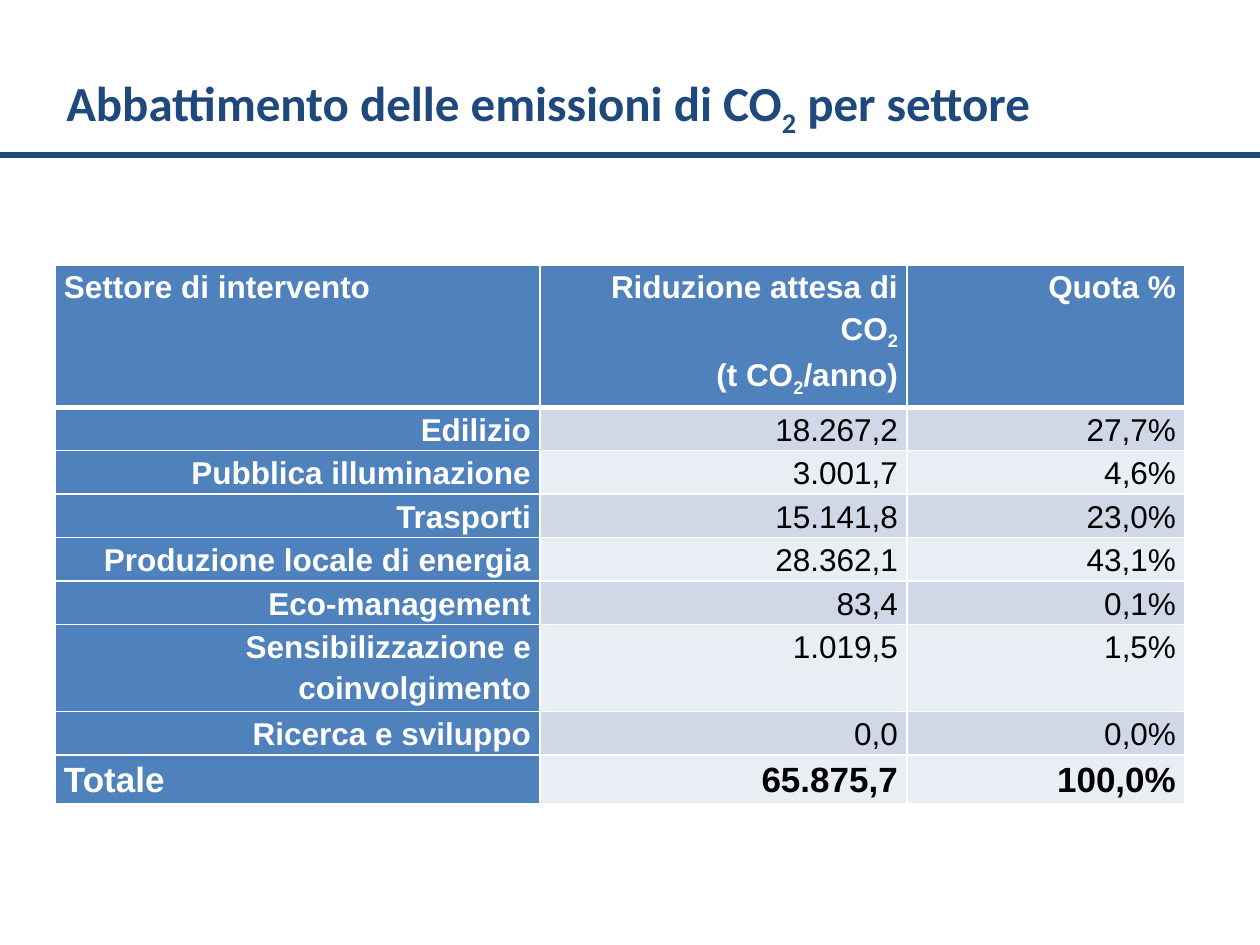
from dataclasses import dataclass

import pptx
import pptx.dml.color
import pptx.enum.shapes
import pptx.enum.text
import pptx.oxml
import pptx.oxml.ns
import pptx.util

ALIGN = pptx.enum.text.PP_ALIGN
EMU_PER_PX = 914400 / 126


@dataclass(frozen=True)
class Theme:
    navy: str = "1F497D"
    blue: str = "4F81BD"
    band_dark: str = "D0D8E8"
    band_light: str = "E9EDF4"
    white: str = "FFFFFF"
    black: str = "000000"
    title_font: str = "Calibri"
    table_font: str = "Arial"
    title_size: int = 28
    body_size: int = 18
    total_size: int = 20


@dataclass(frozen=True)
class Sector:
    name: str
    reduction: str
    share: str
    is_total: bool = False


THEME = Theme()
TITLE = "Abbattimento delle emissioni di CO~2~ per settore"
HEADINGS = ["Settore di intervento",
            "Riduzione attesa di CO~2~\n(t CO~2~/anno)", "Quota %"]
SECTORS = [
    Sector("Edilizio", "18.267,2", "27,7%"),
    Sector("Pubblica illuminazione", "3.001,7", "4,6%"),
    Sector("Trasporti", "15.141,8", "23,0%"),
    Sector("Produzione locale di energia", "28.362,1", "43,1%"),
    Sector("Eco-management", "83,4", "0,1%"),
    Sector("Sensibilizzazione e coinvolgimento", "1.019,5", "1,5%"),
    Sector("Ricerca e sviluppo", "0,0", "0,0%"),
    Sector("Totale", "65.875,7", "100,0%", is_total=True),
]
COLUMN_WIDTHS = [485, 367, 278]
HEADER_HEIGHT, ROW_HEIGHT, TABLE_HEIGHT = 110, 26, 461


def px(length: int) -> pptx.util.Emu:
    return pptx.util.Emu(round(length * EMU_PER_PX))


def rgb(value: str) -> pptx.dml.color.RGBColor:
    return pptx.dml.color.RGBColor.from_string(value)


def write_text(frame, text: str, *, font: str, size: int, color: str,
               bold: bool = True, align=ALIGN.LEFT, line_spacing: float = 1.0,
               space_after: int = 0) -> None:
    """Fill a text frame; pieces between tildes become subscripts."""
    for index, line in enumerate(text.split("\n")):
        paragraph = frame.add_paragraph() if index else frame.paragraphs[0]
        paragraph.alignment = align
        paragraph.line_spacing = line_spacing
        paragraph.space_after = pptx.util.Pt(space_after)
        for position, piece in enumerate(line.split("~")):
            if not piece:
                continue
            run = paragraph.add_run()
            run.text = piece
            run.font.name = font
            run.font.size = pptx.util.Pt(size)
            run.font.bold = bold
            run.font.color.rgb = rgb(color)
            if position % 2:
                run.font._element.set("baseline", "-25000")


def set_borders(cell, **widths: int) -> None:
    """Add white cell borders, given in points by side: L, R, T, B."""
    properties = cell._tc.get_or_add_tcPr()
    for side, width in widths.items():
        properties.append(pptx.oxml.parse_xml(
            f'<a:ln{side} {pptx.oxml.ns.nsdecls("a")} w="{width * 12700}">'
            f'<a:solidFill><a:srgbClr val="{THEME.white}"/></a:solidFill>'
            f'</a:ln{side}>'))


def fill_cell(cell, text: str, row: int, *, fill: str, color: str,
              size: int = THEME.body_size, bold: bool = True,
              align=ALIGN.RIGHT, space_after: int = 6) -> None:
    cell.margin_left = cell.margin_right = px(9)
    cell.margin_top = cell.margin_bottom = 0
    set_borders(cell, L=1, R=1, T=3 if row == 1 else 1, B=3 if row == 0 else 1)
    cell.fill.solid()
    cell.fill.fore_color.rgb = rgb(fill)
    write_text(cell.text_frame, text, font=THEME.table_font, size=size,
               color=color, bold=bold, align=align, line_spacing=1.15,
               space_after=space_after)


def draw_title(slide) -> None:
    # Rule under the title
    rule = slide.shapes.add_connector(
        pptx.enum.shapes.MSO_CONNECTOR.STRAIGHT, 0, px(155), px(1260), px(155))
    rule.line.color.rgb = rgb(THEME.navy)
    rule.line.width = pptx.util.Pt(3)
    rule._element.spPr.append(pptx.oxml.parse_xml(
        f'<a:effectLst {pptx.oxml.ns.nsdecls("a")}/>'))

    # Title text
    title = slide.shapes.add_textbox(px(54), px(70), px(1123), px(72))
    title.fill.solid()
    title.fill.fore_color.rgb = rgb(THEME.white)
    frame = title.text_frame
    frame.word_wrap = True
    frame.auto_size = pptx.enum.text.MSO_AUTO_SIZE.SHAPE_TO_FIT_TEXT
    frame.vertical_anchor = pptx.enum.text.MSO_ANCHOR.MIDDLE
    write_text(frame, TITLE, font=THEME.title_font, size=THEME.title_size,
               color=THEME.navy)


def draw_table(slide, sectors: list[Sector]) -> None:
    shape = slide.shapes.add_table(
        len(sectors) + 1, len(COLUMN_WIDTHS), px(55), px(265),
        px(sum(COLUMN_WIDTHS)), px(TABLE_HEIGHT))
    table = shape.table
    for column, width in zip(table.columns, COLUMN_WIDTHS):
        column.width = px(width)
    for index, row in enumerate(table.rows):
        row.height = px(ROW_HEIGHT if index else HEADER_HEIGHT)
    shape.height = px(TABLE_HEIGHT)

    # Header row
    for column, heading in enumerate(HEADINGS):
        fill_cell(table.cell(0, column), heading, 0, fill=THEME.blue,
                  color=THEME.white, space_after=0 if column else 6,
                  align=ALIGN.RIGHT if column else ALIGN.LEFT)

    # Sector rows in alternating bands, with a larger total
    for row, sector in enumerate(sectors, start=1):
        size = THEME.total_size if sector.is_total else THEME.body_size
        band = THEME.band_dark if row % 2 else THEME.band_light
        fill_cell(table.cell(row, 0), sector.name, row, fill=THEME.blue,
                  color=THEME.white, size=size,
                  align=ALIGN.JUSTIFY if sector.is_total else ALIGN.RIGHT)
        for column, value in enumerate((sector.reduction, sector.share), start=1):
            fill_cell(table.cell(row, column), value, row, fill=band,
                      color=THEME.black, size=size, bold=sector.is_total)


def main() -> None:
    presentation = pptx.Presentation()
    presentation.slide_width, presentation.slide_height = px(1260), px(945)
    slide = presentation.slides.add_slide(presentation.slide_layouts[6])
    draw_title(slide)
    draw_table(slide, SECTORS)
    presentation.save("out.pptx")


if __name__ == "__main__":
    main()
